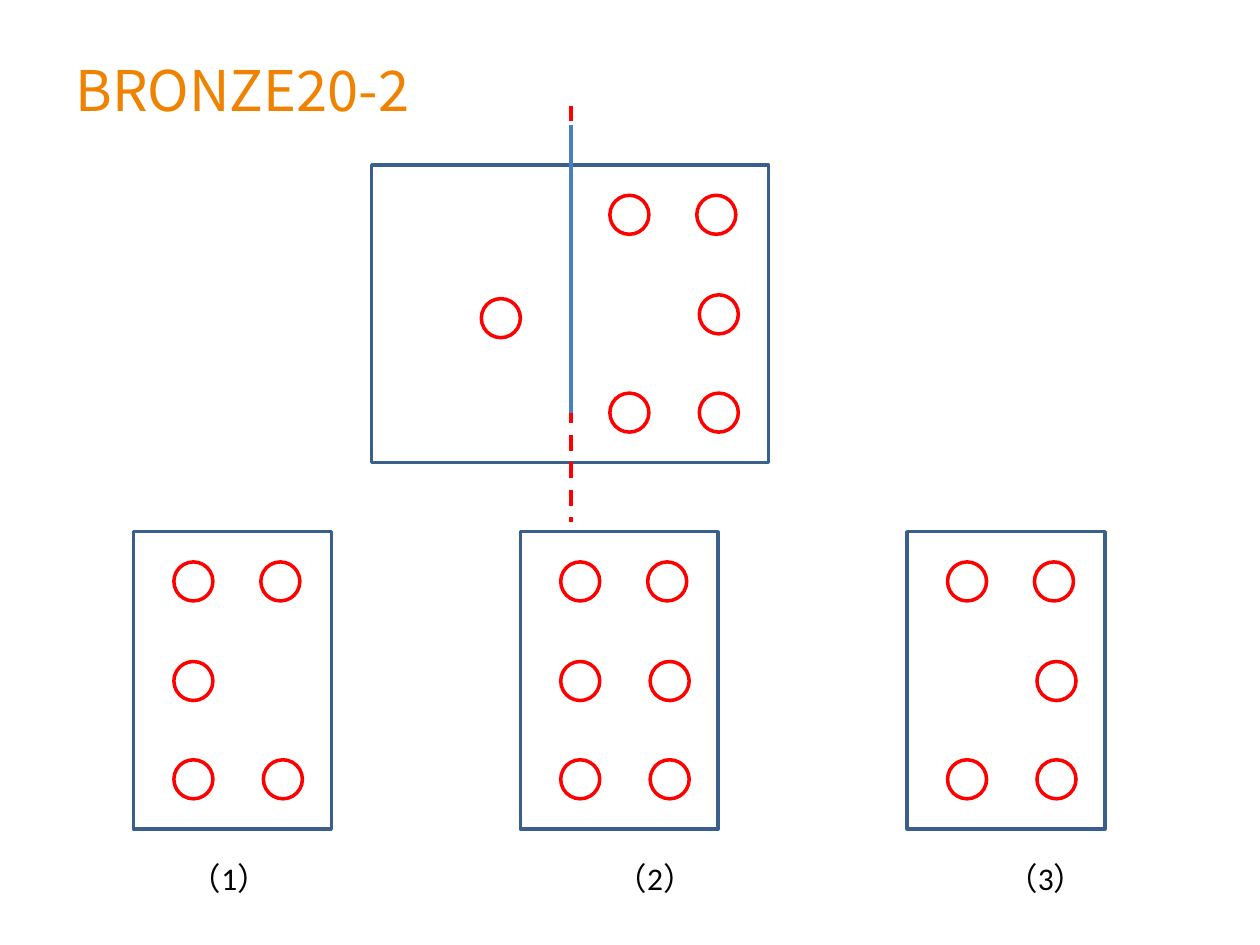
from lxml import etree
from pptx import Presentation
from pptx.dml.color import RGBColor
from pptx.enum import dml, shapes, text
from pptx.oxml.ns import qn
from pptx.util import Inches, Pt

HUES = {"frame": "3A5F8C", "dot": "FF0000", "fold": "4B7EBC",
        "title": "EF8200", "label": "000000"}
DOT = 0.31
# Dot offsets from the top left corner of a half sheet
SPOTS = {"TL": (0.32, 0.24), "TR": (1.01, 0.24),
         "ML": (0.32, 1.03), "MR": (1.03, 1.03),
         "BL": (0.32, 1.81), "BR": (1.03, 1.81)}
CORNERS = ["TL", "TR", "BL", "BR"]


class Board:
    """Holds the style and the slide being drawn."""

    def __init__(self, slide):
        self.slide = slide

    def hue(self, name):
        return RGBColor.from_string(HUES[name])

    def shape(self, kind, x, y, w, h, hue):
        item = self.slide.shapes.add_shape(
            kind, Inches(x), Inches(y), Inches(w), Inches(h))
        item.shadow.inherit = False
        item.fill.background()
        item.line.color.rgb = self.hue(hue)
        item.line.width = Pt(2)

    def sheet(self, x, y, w):
        self.shape(shapes.MSO_SHAPE.RECTANGLE, x, y, w, 2.36, "frame")

    def dot(self, x, y):
        self.shape(shapes.MSO_SHAPE.OVAL, x, y, DOT, DOT, "dot")

    def dots(self, x, y, spots):
        """Places dots at named spots of the half sheet at x, y."""
        for spot in spots:
            dx, dy = SPOTS[spot]
            self.dot(x + dx, y + dy)

    def line(self, x, top, end, hue, dash=None):
        item = self.slide.shapes.add_connector(
            shapes.MSO_CONNECTOR.STRAIGHT,
            Inches(x), Inches(top), Inches(x), Inches(end))
        item.line.color.rgb = self.hue(hue)
        item.line.width = Pt(2.25)
        if dash:
            item.line.dash_style = dash
        etree.SubElement(item.element.spPr, qn("a:effectLst"))

    def text(self, words, x, y, w, h, size, font, hue, align):
        frame = self.slide.shapes.add_textbox(
            Inches(x), Inches(y), Inches(w), Inches(h)).text_frame
        frame.word_wrap = True
        frame.vertical_anchor = text.MSO_ANCHOR.MIDDLE
        frame.text = words
        par = frame.paragraphs[0]
        par.alignment = align
        face = par.runs[0].font
        face.size, face.name = Pt(size), font
        face.color.rgb = self.hue(hue)


def main():
    deck = Presentation()
    deck.slide_width, deck.slide_height = Inches(10), Inches(7.5)
    board = Board(deck.slides.add_slide(deck.slide_layouts[6]))

    board.text("BRONZE20-2", 0.5, 0.08, 9, 1.25, 32, "Noto Sans CJK SC",
               "title", text.PP_ALIGN.LEFT)

    # Folded sheet
    board.sheet(2.95, 1.31, 3.15)
    board.line(4.53, 0.84, 4.14, "dot", dml.MSO_LINE.DASH)
    board.line(4.53, 0.99, 3.28, "fold")
    board.dots(4.52, 1.31, CORNERS + ["MR"])
    board.dot(3.82, 2.37)

    # Answer choices: middle dots and label centre
    choices = [(["ML"], 1.82), (["ML", "MR"], 5.2), (["MR"], 8.3)]
    for i, (middle, centre) in enumerate(choices):
        x = 1.06 + 3.07 * i
        board.sheet(x, 4.22, 1.57)
        board.dots(x, 4.22, CORNERS + middle)
        board.text(f"（{i + 1}）", centre - 0.6, 6.66, 1.2, 0.61, 18,
                   "Calibri", "label", text.PP_ALIGN.CENTER)

    deck.save("out.pptx")


if __name__ == "__main__":
    main()
